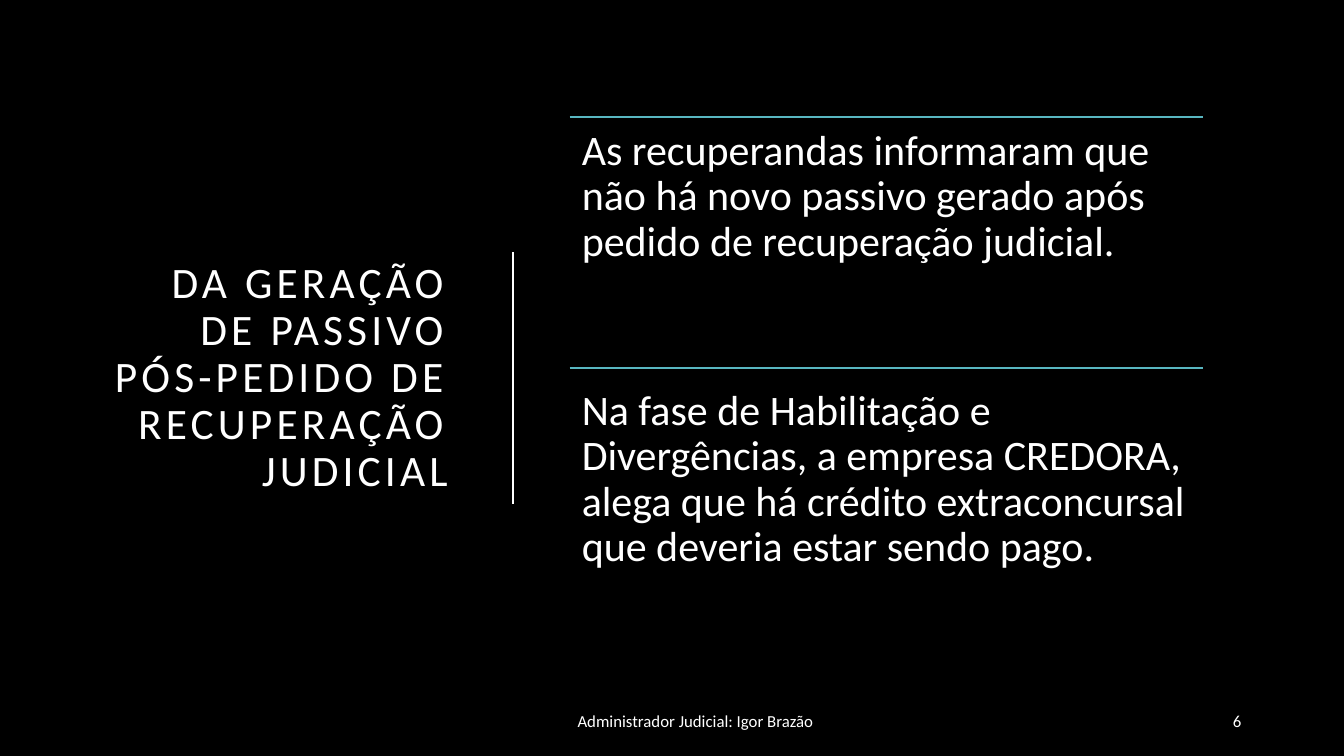
import pptx
import pptx.util
import pptx.dml.color
import pptx.enum.shapes
import pptx.enum.text
import pptx.oxml

Inches = pptx.util.Inches
Pt = pptx.util.Pt
ALIGN = pptx.enum.text.PP_ALIGN
ANCHOR = pptx.enum.text.MSO_ANCHOR

COLORS = {"background": "000000", "text": "FFFFFF", "accent": "58B6C0"}


def rgb(name):
    return pptx.dml.color.RGBColor.from_string(COLORS[name])


class Deck:
    font = "Calibri"

    def __init__(self, width, height):
        self.prs = pptx.Presentation()
        self.prs.slide_width = Inches(width)
        self.prs.slide_height = Inches(height)

    def add_slide(self):
        self.s = self.prs.slides.add_slide(self.prs.slide_layouts[6])
        fill = self.s.background.fill
        fill.solid()
        fill.fore_color.rgb = rgb("background")

    def line(self, x1, y1, x2, y2, color, width):
        sp = self.s.shapes.add_connector(
            pptx.enum.shapes.MSO_CONNECTOR.STRAIGHT,
            Inches(x1), Inches(y1), Inches(x2), Inches(y2))
        sp.line.color.rgb = rgb(color)
        sp.line.width = Pt(width)
        sp._element.spPr.append(pptx.oxml.parse_xml(
            '<a:effectLst xmlns:a="http://schemas.openxmlformats.org/drawingml/2006/main"/>'))

    def text(self, x, y, w, h, text, size, align=ALIGN.LEFT, anchor=ANCHOR.MIDDLE,
             inset=None, line_spacing=None, tracking=None):
        sp = self.s.shapes.add_textbox(Inches(x), Inches(y), Inches(w), Inches(h))
        tf = sp.text_frame
        tf.text = text
        tf.word_wrap = True
        tf.vertical_anchor = anchor
        if inset is not None:
            tf.margin_left = tf.margin_right = Inches(inset)
            tf.margin_top = tf.margin_bottom = Inches(inset)
        p = tf.paragraphs[0]
        p.alignment = align
        p.line_spacing = line_spacing
        r = p.runs[0]
        r.font.name = self.font
        r.font.size = Pt(size)
        r.font.color.rgb = rgb("text")
        if tracking:
            r._r.get_or_add_rPr().set("spc", str(tracking * 100))

    def statement(self, rule_y, text_y, text):
        left, width = 5.65, 6.28
        self.line(left, rule_y, left + width, rule_y, "accent", 1)
        self.text(left, text_y, width, 2.58, text, 30,
                  anchor=ANCHOR.TOP, inset=0.12, line_spacing=0.9)

    def footer(self, x, w, text, align):
        self.text(x, 6.95, w, 0.4, text, 12, align)

    def save(self):
        self.prs.save("out.pptx")


def main():
    deck = Deck(13.33, 7.5)
    deck.add_slide()
    deck.text(0.92, 1.17, 3.62, 5.17,
              "DA GERAÇÃO DE PASSIVO PÓS-PEDIDO DE RECUPERAÇÃO JUDICIAL",
              31, ALIGN.RIGHT, line_spacing=0.9, tracking=3)
    deck.line(5.09, 2.5, 5.09, 5, "text", 1.25)
    deck.statement(1.16, 1.16,
                   "As recuperandas informaram que não há novo passivo gerado após "
                   "pedido de recuperação judicial.")
    deck.statement(3.65, 3.74,
                   "Na fase de Habilitação e Divergências, a empresa CREDORA, alega que há "
                   "crédito extraconcursal que deveria estar sendo pago.")
    deck.footer(5.63, 5.63, "Administrador Judicial: Igor Brazão", ALIGN.LEFT)
    deck.footer(11.43, 0.98, "6", ALIGN.RIGHT)
    deck.save()


if __name__ == "__main__":
    main()
